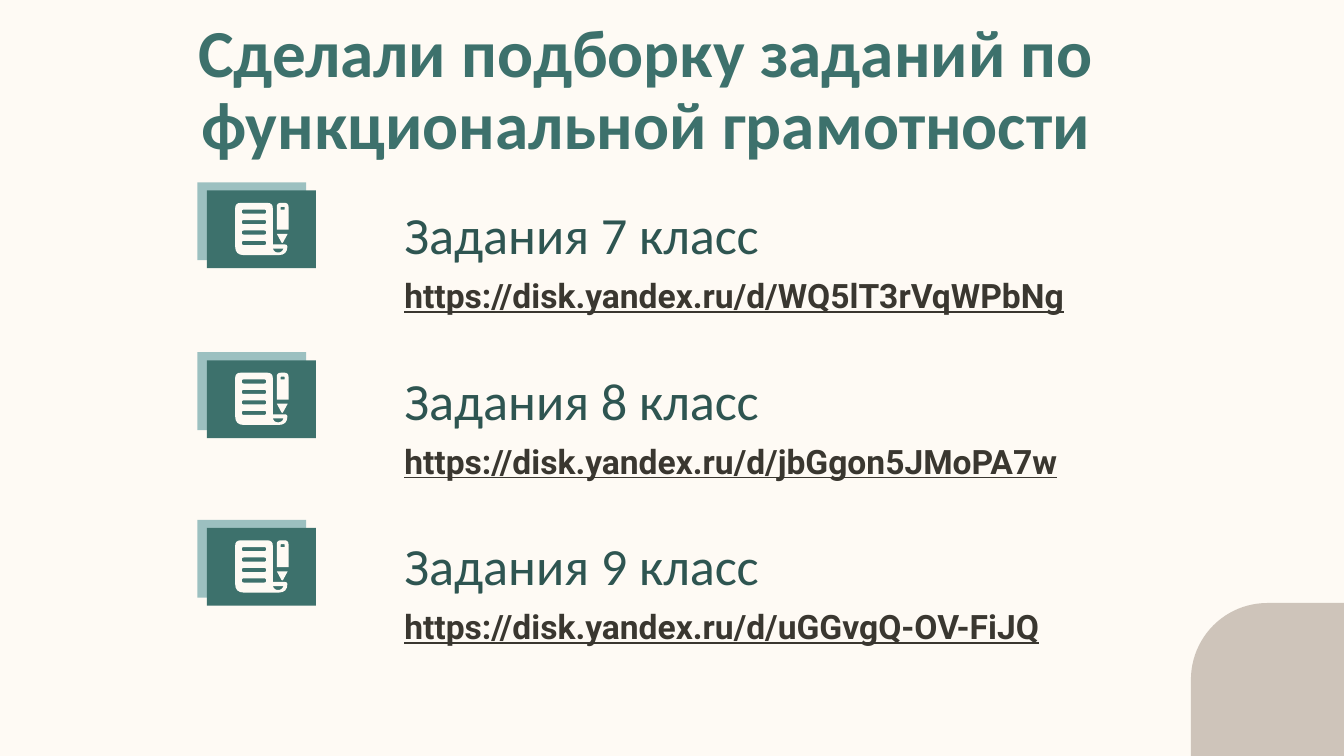
from pptx import Presentation
from pptx.dml.color import RGBColor
from pptx.enum.shapes import MSO_SHAPE
from pptx.enum.text import MSO_ANCHOR, MSO_AUTO_SIZE, PP_ALIGN
from pptx.util import Pt

RECT, CORNER = MSO_SHAPE.RECTANGLE, MSO_SHAPE.ROUND_1_RECTANGLE
TOP, BOTTOM = MSO_ANCHOR.TOP, MSO_ANCHOR.BOTTOM
CREAM, TEAL, PALE, DARK, INK, BEIGE = "FEFAF4", "3D716C", "9CC0C0", "2E5551", "3A3730", "CEC4BA"


def paint(sp, color):
    sp.fill.solid()
    sp.fill.fore_color.rgb = RGBColor.from_string(color)
    sp.line.fill.background()
    sp.shadow.inherit = False


def contour(corners):
    points = []
    for i, (x, y, radius) in enumerate(corners):
        ends = []
        for nx, ny, _ in (corners[i - 1], corners[(i + 1) % len(corners)]):
            k = radius / ((nx - x) ** 2 + (ny - y) ** 2) ** 0.5
            ends.append((x + (nx - x) * k, y + (ny - y) * k))
        (ax, ay), (bx, by) = ends
        for t in (0, 0.25, 0.5, 0.75, 1) if radius else (0,):
            a, b, c = (1 - t) ** 2, 2 * t * (1 - t), t * t
            points.append((round(100 * (a * ax + b * x + c * bx)),
                           round(100 * (a * ay + b * y + c * by))))
    return points


page = [[(0, 0, 3), (20.2, 0, 3), (20.2, 22.3, 0), (28, 22.3, 1.4), (28, 28, 4.7), (0, 28, 4.7)],
        [(20.2, 24.5, 0), (25.9, 24.5, 0), (25, 26.6, 2), (21, 26.6, 2)]]
for i in range(4):
    y = 3.6 + 5.6 * i
    page.append([(3.6, y, 1), (16.6, y, 1), (16.6, y + 2.2, 1), (3.6, y + 2.2, 1)])
tip = [[(22.3, 16.6, 0), (28.1, 16.6, 0), (25.2, 22, 1.2)]]
pencil = [[(22.3, 0, 2.2), (28.6, 0, 2.2), (28.6, 14.4, 0), (22.3, 14.4, 0)],
          [(24.4, 2.1, 0.3), (26.5, 2.1, 0.3), (26.5, 3.6, 0), (24.4, 3.6, 0)]]

prs = Presentation()
prs.slide_width, prs.slide_height = Pt(720), Pt(405)
s = prs.slides.add_slide(prs.slide_layouts[5])
s.background.fill.solid()
s.background.fill.fore_color.rgb = RGBColor.from_string(CREAM)

corner = s.shapes.add_shape(CORNER, Pt(638), Pt(323), Pt(82), Pt(82))
corner.adjustments[0] = 0.5
corner.rotation = 270
paint(corner, BEIGE)

title = s.shapes.title
title.left, title.top, title.width, title.height = Pt(96.5), Pt(3), Pt(499), Pt(45)
texts = [(title, "Сделали подборку заданий по функциональной грамотности",
          TOP, PP_ALIGN.CENTER, "Calibri", 36, TEAL, True, False)]

rows = [
    (102, "Задания 7 класс", "https://disk.yandex.ru/d/WQ5lT3rVqWPbNg"),
    (193, "Задания 8 класс", "https://disk.yandex.ru/d/jbGgon5JMoPA7w"),
    (282.8, "Задания 9 класс", "https://disk.yandex.ru/d/uGGvgQ-OV-FiJQ"),
]
for i, (card_top, grade, link) in enumerate(rows):
    for left, top, color in ((105.7, card_top - 4.3, PALE), (110.9, card_top, TEAL)):
        card = s.shapes.add_shape(RECT, Pt(left), Pt(top), Pt(58.4), Pt(41.7))
        paint(card, color)

    icon = s.shapes.add_group_shape()
    for outlines in (page, tip, pencil):
        paths = [contour(o) for o in outlines]
        fb = icon.shapes.build_freeform(*paths[0][0], scale=Pt(1) / 100)
        fb.add_line_segments(paths[0][1:])
        for path_points in paths[1:]:
            fb.move_to(*path_points[0])
            fb.add_line_segments(path_points[1:])
        paint(fb.convert_to_shape(Pt(126), Pt(card_top + 6.7)), CREAM)

    top = 105.2 + 88.6 * i
    heading = s.shapes.add_textbox(Pt(209.5), Pt(top), Pt(386), Pt(41.8))
    address = s.shapes.add_textbox(Pt(209.5), Pt(top + 41.8), Pt(386), Pt(29.5))
    texts.append((heading, grade, TOP, PP_ALIGN.LEFT, "Calibri", 28, DARK, False, False))
    texts.append((address, link, BOTTOM, PP_ALIGN.LEFT, "Roboto", 18, INK, True, True))

for sp, text, anchor, align, font, size, color, bold, underline in texts:
    tf = sp.text_frame
    tf.text = text
    tf.word_wrap = True
    tf.auto_size = MSO_AUTO_SIZE.NONE
    tf.vertical_anchor = anchor
    tf.margin_left = tf.margin_right = tf.margin_top = tf.margin_bottom = Pt(7.2)
    p = tf.paragraphs[0]
    p.alignment = align
    p.line_spacing = 0.9
    r = p.runs[0]
    r.font.name, r.font.size = font, Pt(size)
    r.font.bold, r.font.underline = bold, underline
    r.font.color.rgb = RGBColor.from_string(color)

prs.save("out.pptx")
